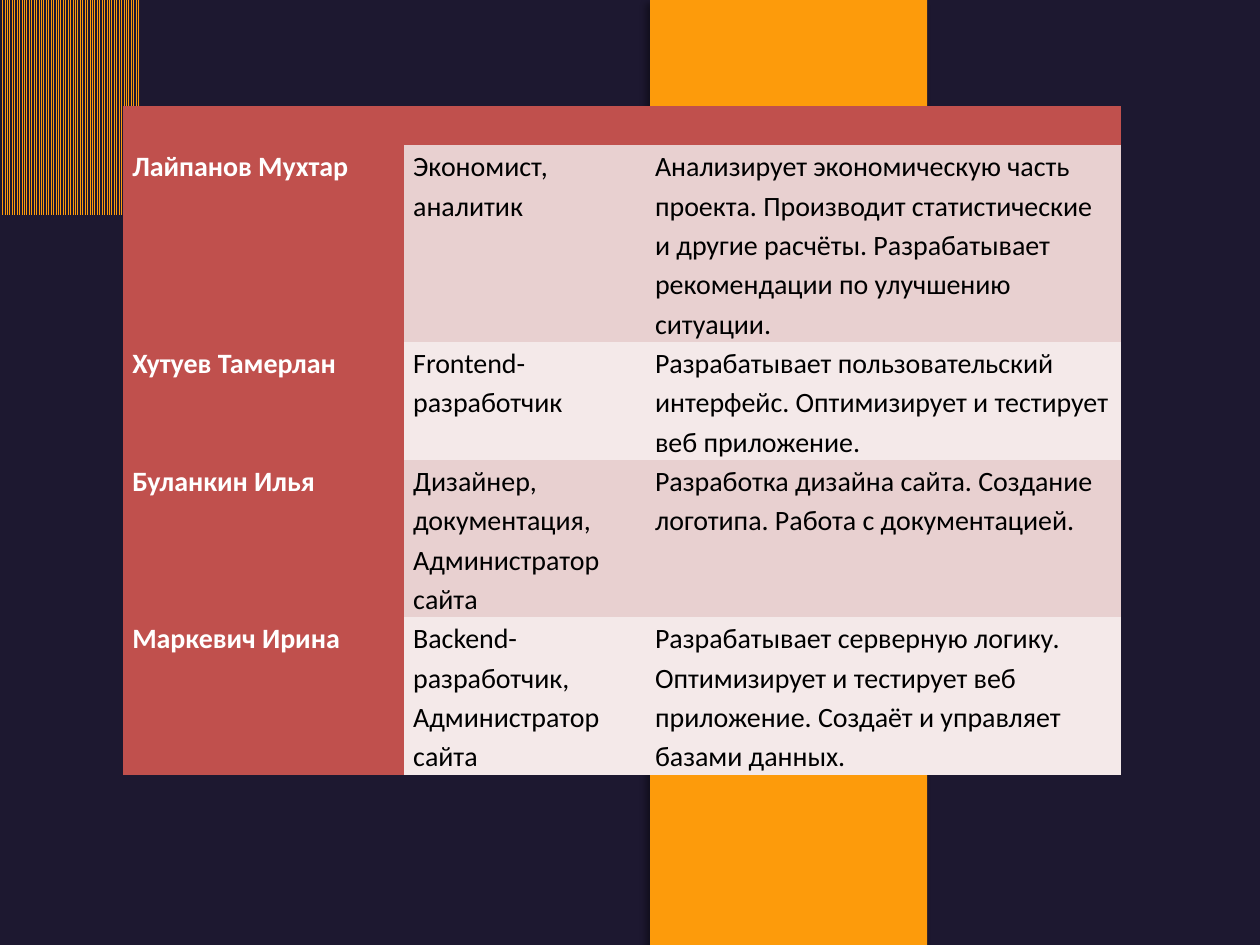
from lxml.etree import SubElement
from pptx import Presentation
from pptx.dml.color import RGBColor
from pptx.enum.dml import MSO_PATTERN
from pptx.enum.shapes import MSO_SHAPE
from pptx.oxml.ns import qn
from pptx.util import Inches, Pt

NIGHT, AMBER, RED = "1D1830", "FD9B0B", "C0504D"
BANDS = ["E8D0D0", "F4E9E9"]
TEAM = [
    ("Лайпанов Мухтар", "Экономист, аналитик",
     "Анализирует экономическую часть проекта. Производит статистические "
     "и другие расчёты. Разрабатывает рекомендации по улучшению ситуации."),
    ("Хутуев Тамерлан", "Frontend-разработчик",
     "Разрабатывает пользовательский интерфейс. Оптимизирует и тестирует "
     "веб приложение."),
    ("Буланкин Илья", "Дизайнер, документация,\nАдминистратор сайта",
     "Разработка дизайна сайта. Создание логотипа. Работа с документацией."),
    ("Маркевич Ирина", "Backend-разработчик, Администратор сайта",
     "Разрабатывает серверную логику. Оптимизирует и тестирует веб "
     "приложение. Создаёт и управляет базами данных."),
]
COLS = [2.23, 1.92, 3.77]
ROWS = [0.31, 1.55, 0.93, 1.24, 1.24]
PADS = {"margin_left": Inches(0.07), "margin_right": Inches(0.07),
        "margin_top": 0, "margin_bottom": 0}
FONT = {"name": "Calibri", "size": Pt(16)}
PLAIN = "{2D5ABB26-0587-4C30-8999-92F81FD0307C}"  # no style, no grid


def rgb(code):
    return RGBColor.from_string(code)


def paint(fill, code):
    fill.solid()
    fill.fore_color.rgb = rgb(code)


def apply(item, attrs):
    for key, val in attrs.items():
        setattr(item, key, val)


def add_rect(slide, *box):
    rect = slide.shapes.add_shape(MSO_SHAPE.RECTANGLE, *map(Inches, box))
    rect.shadow.inherit = False
    rect.line.fill.background()
    return rect


def add_shadow(shape):
    effects = shape._element.spPr.find(qn("a:effectLst"))
    shade = SubElement(effects, qn("a:outerShdw"), blurRad=str(Pt(4)),
                       dist=str(Pt(3)), dir=str(135 * 60000), rotWithShape="0")
    color = SubElement(shade, qn("a:srgbClr"), val="000000")
    SubElement(color, qn("a:alpha"), val="40000")


def fill_cell(cell, text, back, ink, bold):
    apply(cell, PADS)
    paint(cell.fill, back)
    if not text:
        return
    cell.text = text
    for para in cell.text_frame.paragraphs:
        para.line_spacing = 1.15
        for run in para.runs:
            apply(run.font, {**FONT, "bold": bold})
            run.font.color.rgb = rgb(ink)


def add_team(slide, left, top):
    frame = slide.shapes.add_table(len(ROWS), len(COLS), *map(
        Inches, (left, top, sum(COLS), sum(ROWS))))
    table = frame.table
    table._tbl.tblPr.find(qn("a:tableStyleId")).text = PLAIN
    table.first_col = True
    for col, width in zip(table.columns, COLS):
        col.width = Inches(width)
    for row, height in zip(table.rows, ROWS):
        row.height = Inches(height)
    for r, texts in enumerate([("",) * len(COLS)] + TEAM):
        for c, text in enumerate(texts):
            head = r == 0 or c == 0
            back = RED if head else BANDS[(r - 1) % 2]
            fill_cell(table.cell(r, c), text, back,
                      "FFFFFF" if head else "000000", head)


def main():
    prs = Presentation()
    prs.slide_width, prs.slide_height = Inches(10), Inches(7.5)
    slide = prs.slides.add_slide(prs.slide_layouts[6])
    paint(slide.background.fill, NIGHT)

    stripe = add_rect(slide, 5.16, 0, 2.2, 7.59)
    paint(stripe.fill, AMBER)
    add_shadow(stripe)

    hatch = add_rect(slide, 0, 0, 1.1, 1.71).fill
    hatch.patterned()
    hatch.pattern = MSO_PATTERN.LIGHT_VERTICAL
    hatch.fore_color.rgb = rgb(AMBER)
    hatch.back_color.rgb = rgb(NIGHT)

    add_team(slide, 0.98, 0.84)
    prs.save("out.pptx")


if __name__ == "__main__":
    main()
